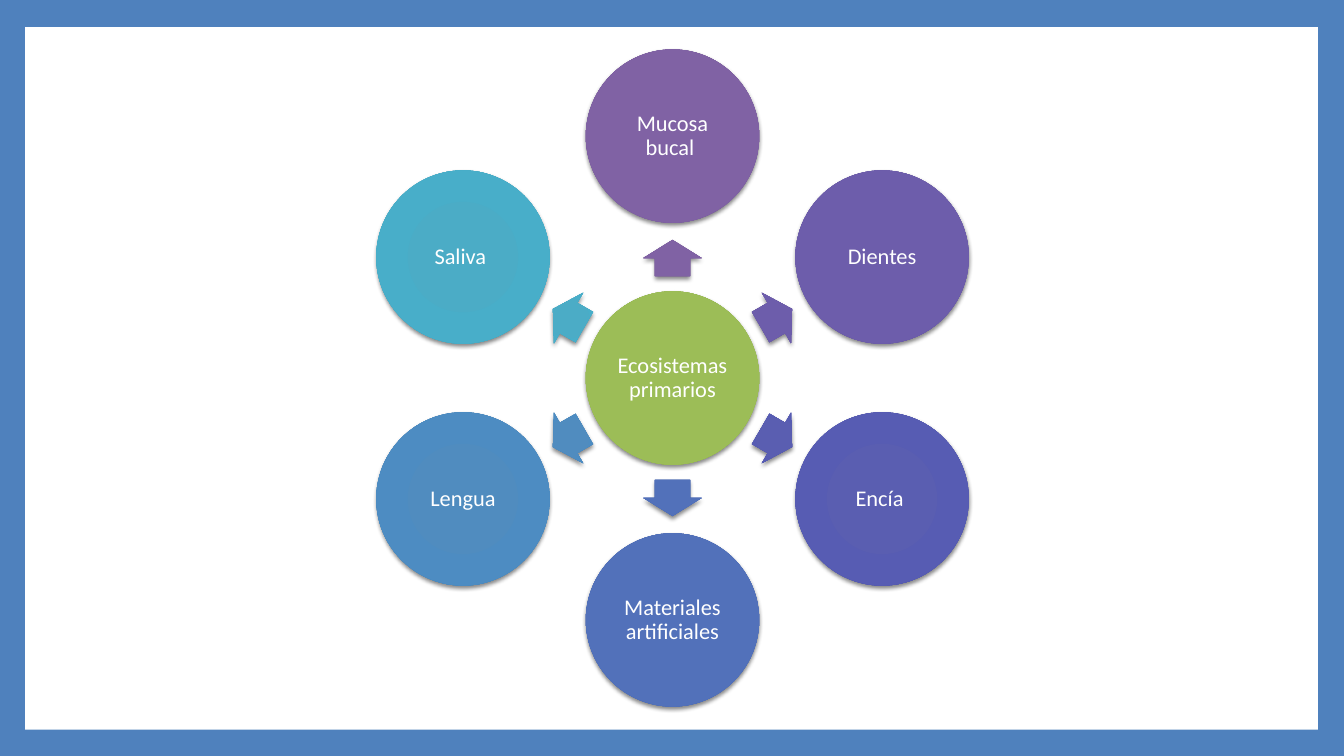
import math

from lxml import etree
from pptx import Presentation
from pptx.dml.color import RGBColor
from pptx.enum import shapes, text
from pptx.oxml.ns import qn
from pptx.util import Inches, Pt

FRAME_BLUE = RGBColor(0x4F, 0x81, 0xBD)
WHITE = RGBColor(0xFF, 0xFF, 0xFF)
SHADOW = RGBColor(0x00, 0x00, 0x00)


def shades(*codes):
    return [RGBColor.from_string(code) for code in codes]


HUB = ("Ecosistemas primarios", shades("9BBB59", "9CBD57", "90B348"))
# Clockwise from the top; a trailing space shifts the centred line slightly.
ECOSYSTEMS = [
    ("Mucosa bucal ", shades("8064A2", "8062A4", "745599")),
    ("Dientes", shades("6E5FA9", "6D5DAB", "604FA1")),
    ("Encía ", shades("5A5EB1", "575CB3", "494EA8")),
    ("Materiales artificiales", shades("5572B8", "5271BA", "4463B0")),
    ("Lengua", shades("508CBF", "4D8CC2", "3E80B7")),
    ("Saliva ", shades("4BACC6", "48AEC9", "39A3BF")),
]
STOPS = (0, 90, 100)

CENTER_X, CENTER_Y = 6.67, 3.75
CIRCLE_RADIUS = 2.4
ARROW_RADIUS = 1.19
DIAMETER = 1.72
ARROW_LENGTH, ARROW_WIDTH = 0.36, 0.58


def add_color(parent, color, alpha=None):
    node = etree.SubElement(parent, qn("a:srgbClr"), val=str(color))
    if alpha is not None:
        etree.SubElement(node, qn("a:alpha"), val=str(alpha * 1000))


def fill_radial(shape, colors):
    shape.fill.gradient()
    gradient = shape._element.spPr.find(qn("a:gradFill"))
    for child in list(gradient):
        gradient.remove(child)
    stops = etree.SubElement(gradient, qn("a:gsLst"))
    for position, color in zip(STOPS, colors):
        stop = etree.SubElement(stops, qn("a:gs"), pos=str(position * 1000))
        add_color(stop, color)
    radial = etree.SubElement(gradient, qn("a:path"), path="circle")
    etree.SubElement(radial, qn("a:fillToRect"),
                     {side: "100000" for side in "ltrb"})


def drop_shadow(shape):
    shape.shadow.inherit = False
    effects = shape._element.spPr.find(qn("a:effectLst"))
    shadow = etree.SubElement(
        effects, qn("a:outerShdw"), blurRad=str(Pt(3)), dist=str(Pt(2)),
        dir="5400000", rotWithShape="0")
    add_color(shadow, SHADOW, alpha=45)


def add_part(slide, kind, x, y, width, height, colors):
    """Add a shaded, shadowed shape centred on x, y."""
    part = slide.shapes.add_shape(
        kind, Inches(x - width / 2), Inches(y - height / 2),
        Inches(width), Inches(height))
    fill_radial(part, colors)
    part.line.fill.background()
    drop_shadow(part)
    return part


def add_circle(slide, x, y, label, colors):
    circle = add_part(slide, shapes.MSO_SHAPE.OVAL, x, y,
                      DIAMETER, DIAMETER, colors)
    frame = circle.text_frame
    frame.word_wrap = True
    frame.vertical_anchor = text.MSO_ANCHOR.MIDDLE
    frame.margin_left = frame.margin_right = Inches(0.02)
    frame.margin_top = frame.margin_bottom = Inches(0.02)
    paragraph = frame.paragraphs[0]
    paragraph.alignment = text.PP_ALIGN.CENTER
    paragraph.line_spacing = 0.9
    run = paragraph.add_run()
    run.text = label
    run.font.name = "Calibri"
    run.font.size = Pt(16)
    run.font.color.rgb = WHITE


def add_arrow(slide, x, y, angle, colors):
    arrow = add_part(slide, shapes.MSO_SHAPE.RIGHT_ARROW, x, y,
                     ARROW_LENGTH, ARROW_WIDTH, colors)
    arrow.adjustments[0] = 0.6
    arrow.adjustments[1] = 0.5
    arrow.rotation = angle % 360


def around_center(radius, angle):
    radians = math.radians(angle)
    return (CENTER_X + radius * math.cos(radians),
            CENTER_Y + radius * math.sin(radians))


def add_framed_page(slide):
    background = slide.background.fill
    background.solid()
    background.fore_color.rgb = FRAME_BLUE
    page = slide.shapes.add_shape(
        shapes.MSO_SHAPE.RECTANGLE,
        Inches(0.25), Inches(0.27), Inches(12.82), Inches(6.97))
    page.fill.solid()
    page.fill.fore_color.rgb = WHITE
    page.line.fill.background()
    page.shadow.inherit = False


def main():
    deck = Presentation()
    deck.slide_width, deck.slide_height = Inches(13.33), Inches(7.5)
    slide = deck.slides.add_slide(deck.slide_layouts[6])
    add_framed_page(slide)
    add_circle(slide, CENTER_X, CENTER_Y, *HUB)
    for index, (label, colors) in enumerate(ECOSYSTEMS):
        angle = -90 + index * 360 / len(ECOSYSTEMS)
        add_arrow(slide, *around_center(ARROW_RADIUS, angle), angle, colors)
        add_circle(slide, *around_center(CIRCLE_RADIUS, angle), label, colors)
    deck.save("out.pptx")


if __name__ == "__main__":
    main()
